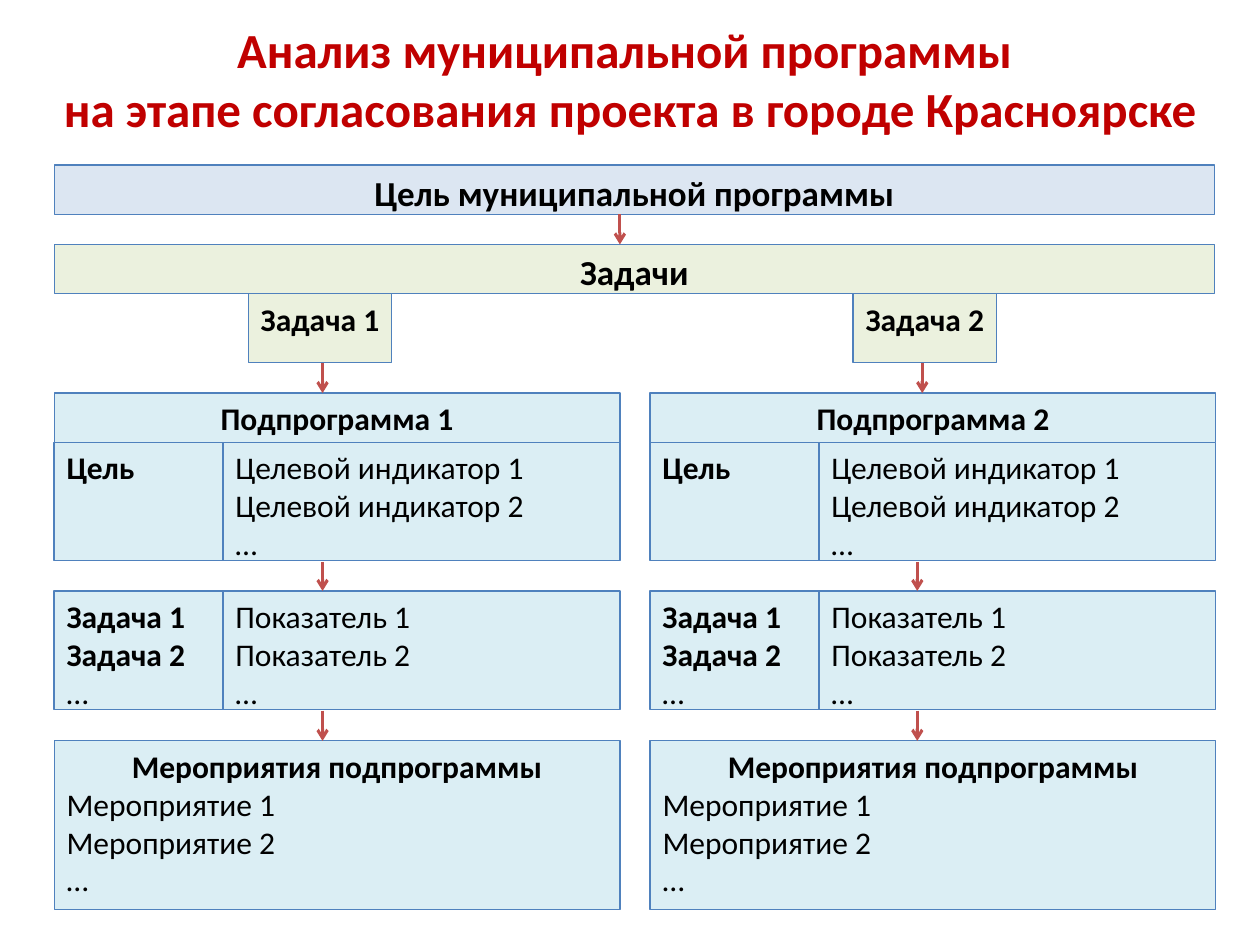
from lxml import etree
from pptx import Presentation
from pptx.dml.color import RGBColor
from pptx.enum.shapes import MSO_CONNECTOR, MSO_SHAPE
from pptx.enum.text import MSO_ANCHOR, PP_ALIGN
from pptx.oxml.ns import qn
from pptx.util import Inches, Pt

COLORS = {
    "title": "C00000", "text": "000000", "border": "4F81BD", "arrow": "C0504D",
    "goal": "DCE6F2", "task": "EBF1DE", "subprogram": "DBEEF4",
}
LEFT, CENTER = PP_ALIGN.LEFT, PP_ALIGN.CENTER

presentation = Presentation()
presentation.slide_width = Inches(10)
presentation.slide_height = Inches(7.5)
slide = presentation.slides.add_slide(presentation.slide_layouts[6])


def add_box(left, top, width, height, fill, lines, size=18, wrap=True):
    """Add a bordered box; each line is (text, bold, alignment)."""
    shape = slide.shapes.add_shape(
        MSO_SHAPE.RECTANGLE, Inches(left), Inches(top), Inches(width), Inches(height))
    shape.shadow.inherit = False
    shape.fill.solid()
    shape.fill.fore_color.rgb = RGBColor.from_string(COLORS[fill])
    shape.line.color.rgb = RGBColor.from_string(COLORS["border"])
    shape.line.width = Pt(0.75)
    frame = shape.text_frame
    frame.word_wrap = wrap
    frame.vertical_anchor = MSO_ANCHOR.TOP
    for index, (text, bold, alignment) in enumerate(lines):
        paragraph = frame.add_paragraph() if index else frame.paragraphs[0]
        paragraph.text = text
        paragraph.alignment = alignment
        for name, value in {"name": "Calibri", "size": Pt(size), "bold": bold}.items():
            setattr(paragraph.font, name, value)
        paragraph.font.color.rgb = RGBColor.from_string(COLORS["text"])


def add_arrow(x, top, bottom):
    connector = slide.shapes.add_connector(
        MSO_CONNECTOR.STRAIGHT, Inches(x), Inches(top), Inches(x), Inches(bottom))
    connector.line.color.rgb = RGBColor.from_string(COLORS["arrow"])
    connector.line.width = Pt(1.75)
    etree.SubElement(connector.line._get_or_add_ln(), qn("a:tailEnd"), type="arrow")
    etree.SubElement(connector._element.spPr, qn("a:effectLst"))


# Title
title = slide.shapes.add_textbox(0, 0, Inches(10), Inches(1.25))
title.text_frame.word_wrap = True
title.text_frame.vertical_anchor = MSO_ANCHOR.MIDDLE
paragraph = title.text_frame.paragraphs[0]
paragraph.text = "Анализ муниципальной программы \vна этапе согласования проекта в городе Красноярске"
paragraph.alignment = CENTER
for name, value in {"name": "Calibri", "size": Pt(28), "bold": True}.items():
    setattr(paragraph.font, name, value)
paragraph.font.color.rgb = RGBColor.from_string(COLORS["title"])

# Programme goal and tasks across the full width
add_box(0.43, 1.31, 9.21, 0.39, "goal", [("Цель муниципальной программы", True, CENTER)], 20)
add_box(0.43, 1.94, 9.21, 0.39, "task", [("Задачи", True, CENTER)], 20)
add_arrow(4.92, 1.7, 1.94)

# One column per task: number, column left, task left, task arrow, lower arrows
columns = [(1, 0.43, 1.97, 2.56, 2.56), (2, 5.16, 6.77, 7.32, 7.28)]
label_width, detail_width = 1.34, 3.15
column_width = label_width + detail_width

for number, left, task_left, task_arrow, lower_arrow in columns:
    detail_left = left + label_width

    # Task and its subprogramme
    add_box(task_left, 2.33, 1.14, 0.55, "task",
            [(f"Задача {number}", True, CENTER)], wrap=False)
    add_box(left, 3.12, column_width, 0.39, "subprogram",
            [(f"Подпрограмма {number}", True, CENTER)])

    # Goal with target indicators, tasks with measures
    rows = [
        (3.51, [("Цель", True, LEFT)], "Целевой индикатор"),
        (4.69, [("Задача 1", True, LEFT), ("Задача 2", True, LEFT), ("…", False, LEFT)],
         "Показатель"),
    ]
    for top, labels, detail in rows:
        details = [(text, False, LEFT) for text in (f"{detail} 1", f"{detail} 2", "…")]
        add_box(left, top, label_width, 0.94, "subprogram", labels)
        add_box(detail_left, top, detail_width, 0.94, "subprogram", details)

    # Activities
    add_box(left, 5.88, column_width, 1.34, "subprogram", [
        ("Мероприятия подпрограммы", True, CENTER),
        ("Мероприятие 1", False, LEFT),
        ("Мероприятие 2", False, LEFT),
        ("…", False, LEFT),
    ])

    # Arrows between the levels
    for x, top, bottom in [(task_arrow, 2.88, 3.12), (lower_arrow, 4.46, 4.69),
                           (lower_arrow, 5.64, 5.88)]:
        add_arrow(x, top, bottom)

presentation.save("out.pptx")
